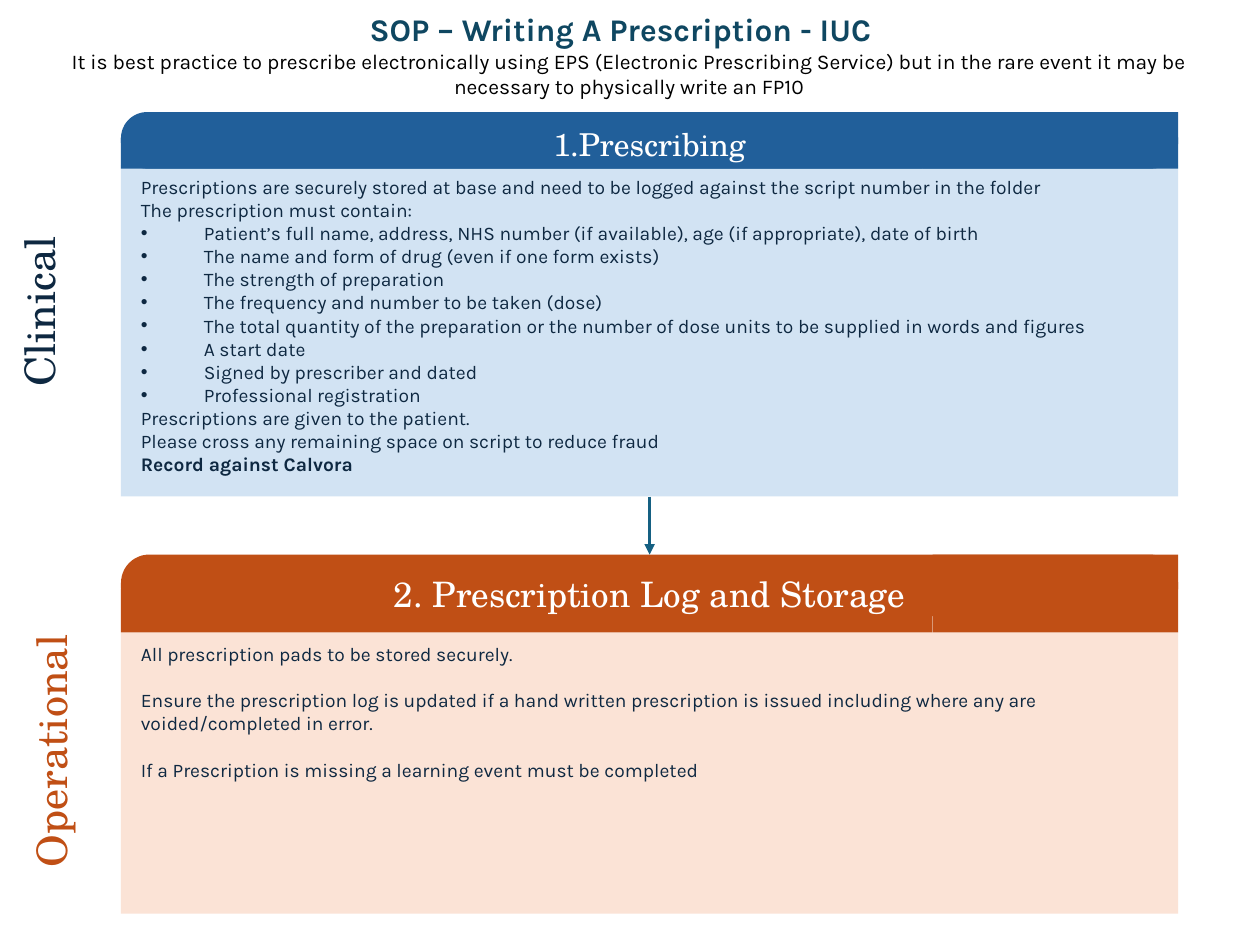
from lxml import etree
from pptx import Presentation
from pptx.dml.color import RGBColor
from pptx.enum.shapes import MSO_CONNECTOR, MSO_SHAPE
from pptx.enum.text import MSO_ANCHOR, MSO_AUTO_SIZE, PP_ALIGN
from pptx.oxml.ns import qn
from pptx.util import Cm, Pt

RECT, ROUND = MSO_SHAPE.RECTANGLE, MSO_SHAPE.ROUNDED_RECTANGLE
LINE = MSO_CONNECTOR.STRAIGHT
TOP, GROW = MSO_ANCHOR.TOP, MSO_AUTO_SIZE.SHAPE_TO_FIT_TEXT
LEFT, MID = PP_ALIGN.LEFT, PP_ALIGN.CENTER

NAVY = RGBColor(0x0E, 0x28, 0x41)
BLUE = RGBColor(0x21, 0x5F, 0x9A)
PALE = RGBColor(0xD2, 0xE3, 0xF3)
RUST = RGBColor(0xC0, 0x4F, 0x15)
PEACH = RGBColor(0xFB, 0xE3, 0xD6)
TEAL = RGBColor(0x0F, 0x47, 0x61)
ARROW = RGBColor(0x15, 0x60, 0x82)
BLACK = RGBColor(0, 0, 0)
WHITE = RGBColor(0xFF, 0xFF, 0xFF)

SANS, SERIF = "Karla", "TeX Gyre Schola"
BODY = {"name": SANS, "size": Pt(11)}

NEEDS = [
    "Patient’s full name, address, NHS number (if available), age (if appropriate), date of birth",
    "The name and form of drug (even if one form exists)",
    "The strength of preparation",
    "The frequency and number to be taken (dose)",
    "The total quantity of the preparation or the number of dose units to be supplied in words and figures",
    "A start date",
    "Signed by prescriber and dated",
    "Professional registration",
]
INTRO = [
    "Prescriptions are securely stored at base and need to be logged against the script number in the folder",
    "The prescription must contain:",
]
CLOSE = [
    "Prescriptions are given to the patient.",
    "Please cross any remaining space on script to reduce fraud",
]
RECORD = "Record against Calvora"
RULES = [
    "All prescription pads to be stored securely.",
    "Ensure the prescription log is updated if a hand written prescription is issued "
    "including where any are voided/completed in error.",
    "If a Prescription is missing a learning event must be completed",
]


def style(item, values):
    for key, value in values.items():
        setattr(item, key, value)


def write(frame, text, color, font, para=None, first=False):
    line = frame.paragraphs[0] if first else frame.add_paragraph()
    style(line, para or {})
    run = line.add_run()
    run.text = text
    style(run.font, font)
    run.font.color.rgb = color
    return line


def bullet(line):
    props = line._p.get_or_add_pPr()
    props.set("marL", str(Cm(1.27)))
    props.set("indent", str(-Cm(1.27)))
    etree.SubElement(props, qn("a:buFont")).set("typeface", "Arial")
    etree.SubElement(props, qn("a:buChar")).set("char", "•")


def block(shapes, kind, box, color):
    shape = shapes.add_shape(kind, *map(Cm, box))
    shape.shadow.inherit = False
    shape.fill.solid()
    shape.fill.fore_color.rgb = color
    shape.line.fill.background()
    return shape


def label(shapes, box, text, color, font, para=None, turn=0):
    shape = shapes.add_textbox(*map(Cm, box))
    shape.rotation = turn
    style(shape.text_frame, {"word_wrap": True, "auto_size": GROW})
    write(shape.text_frame, text, color, font,
          {"alignment": MID, **(para or {})}, True)


def panel(slide, box, head, title, fill, dark, lines):
    """Draw a headed box; head gives the sizes of its banner, lines are (text, bold, bulleted, gap)."""
    x, y, w, h = box
    shapes = slide.shapes.add_group_shape().shapes
    body = block(shapes, RECT, (x, y + head["body"], w, h - head["body"]), fill)
    frame = body.text_frame
    style(frame, {"word_wrap": True, "vertical_anchor": TOP,
                  "margin_left": Cm(0.4), "margin_right": Cm(0.4),
                  "margin_top": Cm(0.2), "margin_bottom": Cm(0.2)})
    for i, (text, bold, dotted, gap) in enumerate(lines):
        line = write(frame, text, NAVY, {**BODY, "bold": bold},
                     {"alignment": LEFT, "space_after": Pt(gap)}, i == 0)
        if dotted:
            bullet(line)

    full, strip, split = head["full"], head["strip"], head["split"]
    block(shapes, RECT, (x, y + full - strip, split, strip), dark)
    cap = block(shapes, ROUND, (x, y, w, head["cap"]), dark)
    cap.adjustments[0] = 0.46
    block(shapes, RECT, (x + split, y, w - split, full), dark)
    label(shapes, (x, y + head["drop"], w, full - head["drop"]), title, WHITE,
          {"name": SERIF, "size": Pt(head["size"])})
    return cap, body


def arrow(slide, start, end):
    link = slide.shapes.add_connector(LINE, 0, 0, 0, 0)
    link.begin_connect(start, 2)
    link.end_connect(end, 0)
    link.line.color.rgb = ARROW
    link.line.width = Pt(1.5)
    tail = etree.SubElement(link.line._get_or_add_ln(), qn("a:tailEnd"))
    tail.set("type", "triangle")
    etree.SubElement(link._element.spPr, qn("a:effectLst"))


def heading(slide):
    label(slide.shapes, (1.27, 0.03, 22.48, 1.04),
          "SOP – Writing A Prescription - IUC", TEAL,
          {"name": SANS, "size": Pt(18), "bold": True},
          {"line_spacing": 1.07, "space_before": Pt(8), "space_after": Pt(4)})
    label(slide.shapes, (0.58, 0.86, 24.21, 1.27),
          "It is best practice to prescribe electronically using EPS (Electronic "
          "Prescribing Service) but in the rare event it may be necessary to "
          "physically write an FP10", BLACK, {"name": SANS, "size": Pt(12)})


def main():
    deck = Presentation()
    deck.slide_width, deck.slide_height = Cm(25.4), Cm(19.05)
    slide = deck.slides.add_slide(deck.slide_layouts[6])

    steps = ([(text, False, False, 0) for text in INTRO]
             + [(text, False, True, 0) for text in NEEDS]
             + [(text, False, False, 0) for text in CLOSE]
             + [(RECORD, True, False, 0)])
    rules = [(text, False, False, 13.2) for text in RULES]

    _, body = panel(slide, (2.44, 2.26, 21.31, 7.75),
                    {"full": 1.14, "cap": 1.14, "strip": 0.63, "body": 1.07,
                     "split": 16.16, "drop": 0.13, "size": 18},
                    "1.Prescribing", PALE, BLUE, steps)
    cap, _ = panel(slide, (2.44, 11.18, 21.31, 7.24),
                   {"full": 1.57, "cap": 1.24, "strip": 0.89, "body": 1.57,
                    "split": 16.36, "drop": 0.23, "size": 20},
                   "2. Prescription Log and Storage", PEACH, RUST, rules)
    arrow(slide, body, cap)

    side = {"name": SERIF, "size": Pt(24)}
    label(slide.shapes, (-2.82, 5.64, 7.21, 1.27), "Clinical", NAVY, side, turn=270)
    label(slide.shapes, (-2.26, 14.5, 6.55, 1.27), "Operational", RUST, side, turn=270)
    heading(slide)
    deck.save("out.pptx")


if __name__ == "__main__":
    main()
